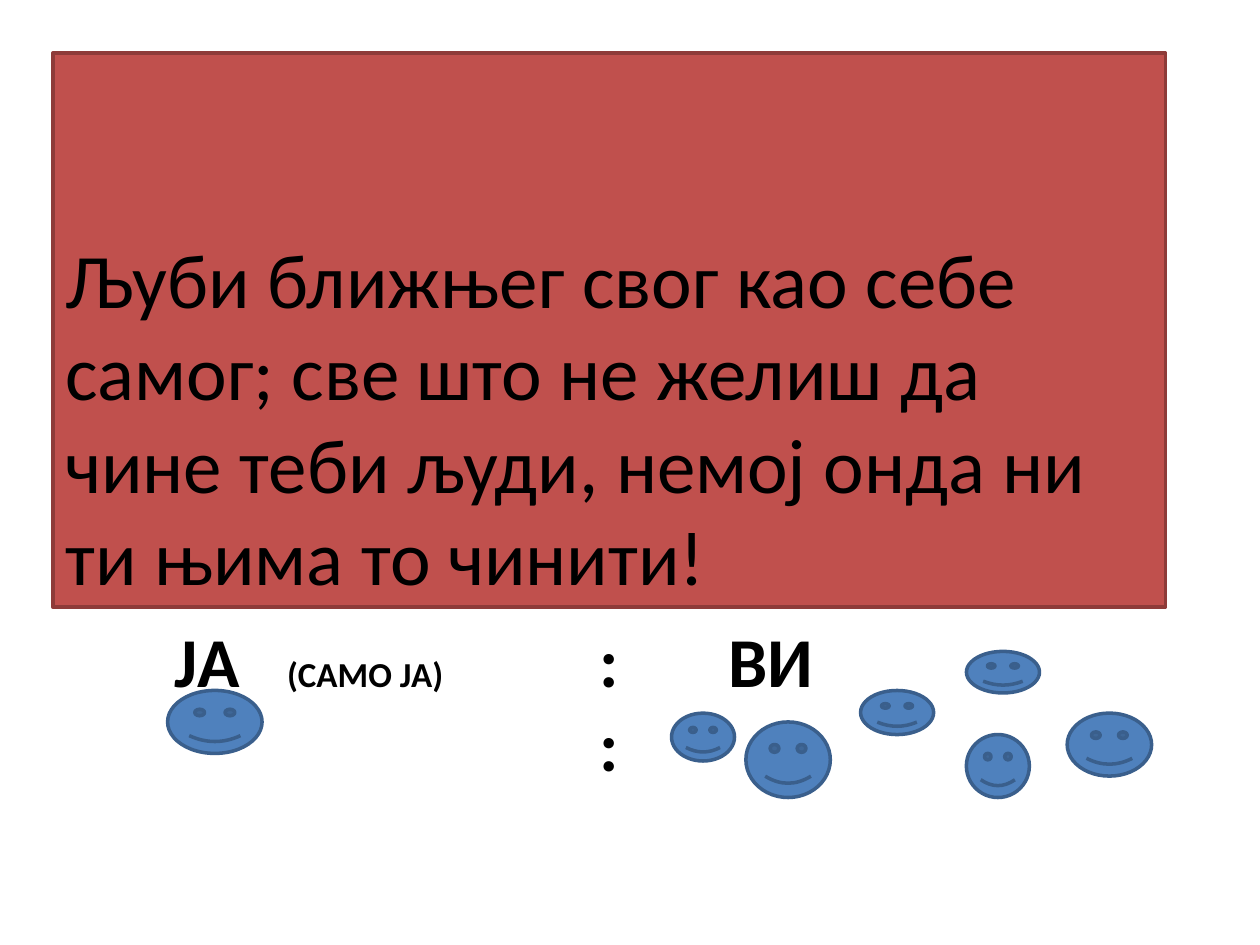
"""Build a slide with a golden-rule quotation above a comparison of me and you."""
import lxml.etree
import pptx
import pptx.dml.color
import pptx.enum.shapes
import pptx.enum.text
import pptx.oxml.ns
import pptx.util

Inches = pptx.util.Inches
Pt = pptx.util.Pt
Shapes = pptx.enum.shapes.MSO_SHAPE
Anchor = pptx.enum.text.MSO_ANCHOR


def paint(color_format, value):
    color_format.rgb = pptx.dml.color.RGBColor.from_string(value)


def add_text(para, text, size, bold=False, color="000000"):
    span = para.add_run()
    span.text = text
    span.font.name = "Calibri"
    span.font.size = Pt(size)
    span.font.bold = bold
    paint(span.font.color, color)


deck = pptx.Presentation()
deck.slide_width = Inches(10)
deck.slide_height = Inches(7.5)
page = deck.slides.add_slide(deck.slide_layouts[6])

title = page.shapes.add_textbox(Inches(0.79), Inches(4.82), Inches(8.5), Inches(1.49))
title.text_frame.word_wrap = True
title.text_frame.vertical_anchor = Anchor.MIDDLE
para = title.text_frame.paragraphs[0]
tabs = lxml.etree.SubElement(para._p.get_or_add_pPr(), pptx.oxml.ns.qn("a:tabLst"))
for position in (0.5, 1.39, 3.87, 4.89):
    lxml.etree.SubElement(tabs, pptx.oxml.ns.qn("a:tab"), pos=str(Inches(position)), algn="l")
add_text(para, "\tЈА", 40, bold=True)
add_text(para, "\t(САМО ЈА)", 20, bold=True)
add_text(para, "\t:\tВИ", 40, bold=True)
para.add_line_break()
add_text(para, "\t\t\t:", 40, bold=True)

shapes = [
    (Shapes.RECTANGLE, 0.42, 0.42, 8.83, 4.4, "C0504D", "8E3B39"),
]
for left, top, width, height in (
    (1.33, 5.48, 0.75, 0.5),
    (6.83, 5.48, 0.58, 0.35),
    (7.67, 5.17, 0.58, 0.33),
    (5.92, 5.73, 0.67, 0.6),
    (8.47, 5.66, 0.67, 0.5),
    (7.67, 5.83, 0.5, 0.5),
    (5.33, 5.66, 0.5, 0.38),
):
    shapes.append((Shapes.SMILEY_FACE, left, top, width, height, "4F81BD", "3A5F8C"))

for kind, left, top, width, height, fill, line in shapes:
    box = page.shapes.add_shape(kind, Inches(left), Inches(top), Inches(width), Inches(height))
    box.shadow.inherit = False
    box.fill.solid()
    paint(box.fill.fore_color, fill)
    paint(box.line.color, line)
    box.line.width = Pt(2)
    if kind == Shapes.RECTANGLE:
        box.text_frame.word_wrap = True
        box.text_frame.vertical_anchor = Anchor.BOTTOM
        para = box.text_frame.paragraphs[0]
        para.alignment = pptx.enum.text.PP_ALIGN.LEFT
        add_text(
            para,
            "Љуби ближњег свог као себе самог; све што не желиш да чине теби људи, "
            "немој онда ни ти њима то чинити!",
            44,
        )

deck.save("out.pptx")
